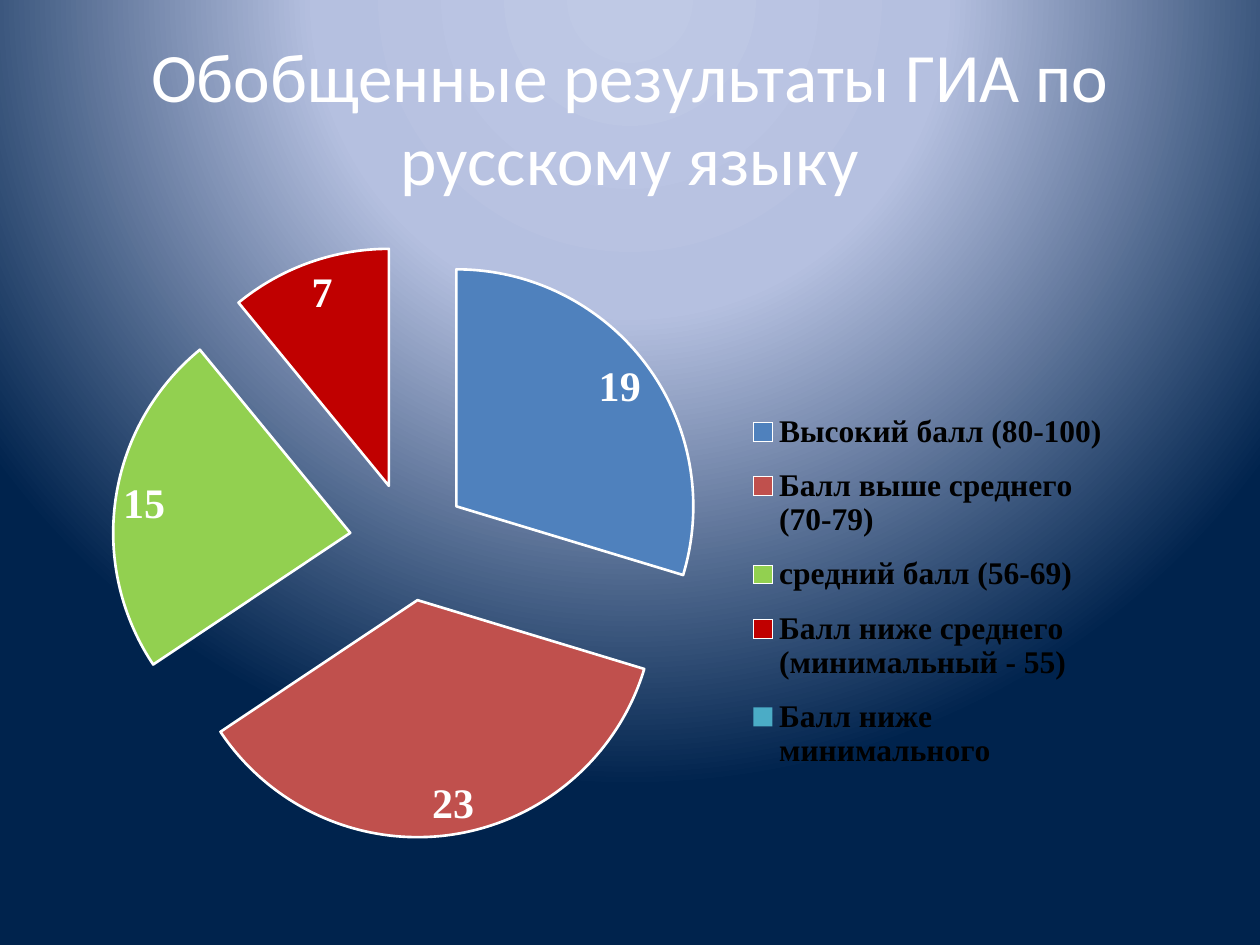
from pptx import Presentation
from pptx import util as u
from pptx.chart.data import CategoryChartData
from pptx.dml.color import RGBColor
from pptx.enum import chart as ch, text
from pptx.oxml import parse_xml
from pptx.oxml.ns import nsdecls, qn

COLORS = {
    "white": "FFFFFF", "black": "000000",
    "glow": "BFC9E5", "haze": "B5C0E0", "navy": "00234D",
    "blue": "4F81BD", "brick": "C0504D", "green": "92D050",
    "red": "C00000", "teal": "4BACC6",
}
# Category, number of pupils, slice colour
RESULTS = [
    ("Высокий балл (80-100)", 19, "blue"),
    ("Балл выше среднего (70-79)", 23, "brick"),
    ("средний балл (56-69)", 15, "green"),
    ("Балл ниже среднего (минимальный - 55)", 7, "red"),
    ("Балл ниже минимального", 0, "teal"),
]
# Label shifts by slice, as fractions of the chart
LABEL_SHIFTS = {0: (0, -0.01), 1: (0.02, 0), 2: (0, -0.03)}


def rgb(name):
    return RGBColor.from_string(COLORS[name])


def set_font(font, size, color, name="Times New Roman", bold=True):
    font.size, font.name, font.bold = u.Pt(size), name, bold
    font.color.rgb = rgb(color)


def write_text(tf, content, align=text.PP_ALIGN.CENTER, **font):
    p = tf.paragraphs[0]
    p.alignment = align
    r = p.add_run()
    r.text = content
    set_font(r.font, **font)


def set_background(s, stops):
    """Radial gradient centred above the slide."""
    s.background.fill.gradient()
    old = s.element.find(".//" + qn("a:gradFill"))
    gs = "".join(f'<a:gs pos="{pos * 1000}"><a:srgbClr val="{COLORS[c]}"/></a:gs>'
                 for pos, c in stops)
    old.getparent().replace(old, parse_xml(
        f'<a:gradFill {nsdecls("a")} rotWithShape="1"><a:gsLst>{gs}</a:gsLst>'
        '<a:path path="circle"><a:fillToRect l="50000" t="-80000" r="50000" b="180000"/>'
        '</a:path></a:gradFill>'))


def add_title(s, content):
    sp = s.shapes.title
    sp.left, sp.top = u.Inches(0.5), u.Inches(0.3)
    sp.width, sp.height = u.Inches(9), u.Inches(1.25)
    tf = sp.text_frame
    tf.word_wrap = True
    tf.auto_size = text.MSO_AUTO_SIZE.NONE
    tf.vertical_anchor = text.MSO_ANCHOR.MIDDLE
    write_text(tf, content, size=39.6, color="white", name="Calibri", bold=False)


def set_layout(parent, after=None, **values):
    """Place a chart part by hand, after the named child or first."""
    for old in parent.findall(qn("c:layout")):
        parent.remove(old)
    items = "".join(f'<c:{k} val="{v}"/>' for k, v in values.items())
    layout = parse_xml(f'<c:layout {nsdecls("c")}><c:manualLayout>{items}'
                       '</c:manualLayout></c:layout>')
    if after:
        parent.find(qn(after)).addnext(layout)
    else:
        parent.insert(0, layout)


def explode(series, percent):
    anchor = series._element.find(qn("c:dPt"))
    anchor.addprevious(parse_xml(f'<c:explosion {nsdecls("c")} val="{percent}"/>'))


def add_labels(series):
    """Value labels, with zero left blank."""
    labels = series.data_labels
    labels.show_value = True
    labels.show_percentage = False
    labels.number_format = "0;;;"
    labels.number_format_is_linked = False
    labels.position = ch.XL_LABEL_POSITION.INSIDE_END
    set_font(labels.font, 24, "white")
    for i, (x, y) in LABEL_SHIFTS.items():
        label = series.points[i].data_label
        set_font(label.font, 24, "white")
        label.position = ch.XL_LABEL_POSITION.INSIDE_END
        dlbl = labels._element.findall(qn("c:dLbl"))[-1]
        set_layout(dlbl, after="c:idx", x=x, y=y)


def add_pie(s, results):
    data = CategoryChartData()
    data.categories = [name for name, _, _ in results]
    data.add_series("Series 1", [value for _, value, _ in results])
    chart = s.shapes.add_chart(ch.XL_CHART_TYPE.PIE, u.Inches(0.5), u.Inches(1.75),
                               u.Inches(9.15), u.Inches(4.95), data).chart
    chart.has_title = False
    set_font(chart.font, 10, "white", name="Calibri", bold=False)
    set_layout(chart.element.find(".//" + qn("c:plotArea")), layoutTarget="inner",
               xMode="edge", yMode="edge", x=0.04, y=0.04, w=0.52, h=0.95)

    # Slices
    plot = chart.plots[0]
    plot.vary_by_categories = True
    series = plot.series[0]
    for i, (_, value, color) in enumerate(results):
        fmt = series.points[i].format
        fmt.fill.solid()
        fmt.fill.fore_color.rgb = rgb(color)
        if value:
            fmt.line.color.rgb = rgb("white")
            fmt.line.width = u.Pt(1.5)
        else:
            fmt.line.fill.background()
    explode(series, 25)
    add_labels(series)

    # Legend
    chart.has_legend = True
    legend = chart.legend
    legend.position = ch.XL_LEGEND_POSITION.RIGHT
    legend.include_in_layout = False
    set_font(legend.font, 18, "black")
    set_layout(chart.element.find(".//" + qn("c:legend")), after="c:legendPos",
               xMode="edge", yMode="edge", x=0.59, y=0.28, w=0.32, h=0.63)


def main():
    prs = Presentation()
    prs.slide_width, prs.slide_height = u.Inches(10), u.Inches(7.5)
    s = prs.slides.add_slide(prs.slide_layouts[5])
    set_background(s, [(0, "glow"), (40, "haze"), (100, "navy")])
    add_title(s, "Обобщенные результаты ГИА по русскому языку")
    add_pie(s, RESULTS)
    prs.save("out.pptx")


if __name__ == "__main__":
    main()
